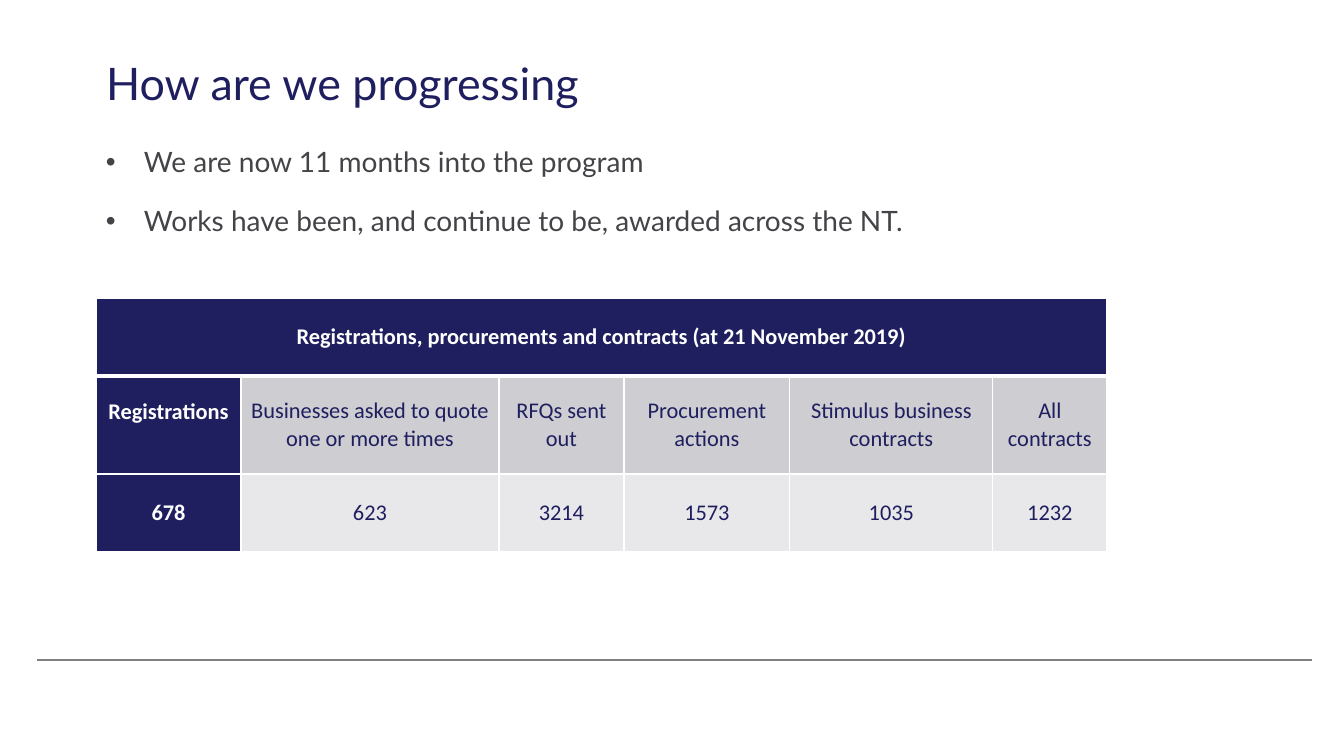
from lxml import etree
from pptx import Presentation
from pptx.dml.color import RGBColor
from pptx.enum.shapes import MSO_CONNECTOR
from pptx.enum.text import MSO_ANCHOR, PP_ALIGN
from pptx.oxml.ns import qn
from pptx.util import Emu, Pt

SCALE = 914400 / 100.8
STRAIGHT = MSO_CONNECTOR.STRAIGHT
TOP, MIDDLE = MSO_ANCHOR.TOP, MSO_ANCHOR.MIDDLE
CENTER, LEFT = PP_ALIGN.CENTER, PP_ALIGN.LEFT

NAVY, WHITE, GREY_TEXT, RULE_GREY = "1F1F5F", "FFFFFF", "454347", "808080"
HEADING_FILL, VALUE_FILL = "CDCDD2", "E8E8EA"

POINTS = ["We are now 11 months into the program",
          "Works have been, and continue to be, awarded across the NT."]
TABLE_TITLE = "Registrations, procurements and contracts (at 21 November 2019)"
# Heading, value and column width in px
MEASURES = [("Registrations", "678", 145),
            ("Businesses asked to quote one or more times", "623", 258),
            ("RFQs sent out", "3214", 125),
            ("Procurement actions", "1573", 166),
            ("Stimulus business contracts", "1035", 203),
            ("All contracts", "1232", 114)]
ROW_HEIGHTS = [78, 98, 78]


def px(length):
    return Emu(round(length * SCALE))


def color(value):
    return RGBColor.from_string(value)


def apply(target, values):
    for name, value in values.items():
        setattr(target, name, value)


def style_font(font, name, size, tone, bold=False):
    apply(font, {"name": name, "size": Pt(size), "bold": bold})
    font.color.rgb = color(tone)


def add_title(page, text):
    title = page.shapes.title
    apply(title, {"left": px(96), "top": px(39), "width": px(1158), "height": px(80)})
    frame = title.text_frame
    frame.text = text
    frame.vertical_anchor = MIDDLE
    para = frame.paragraphs[0]
    apply(para, {"alignment": LEFT, "line_spacing": Pt(43.9)})
    style_font(para.font, "Lato", 32, NAVY)


def add_bullets(page, points):
    frame = page.shapes.add_textbox(px(96), px(145), px(1158), px(127)).text_frame
    apply(frame, {"word_wrap": True, "margin_top": 0, "margin_bottom": px(5)})
    for index, point in enumerate(points):
        para = frame.add_paragraph() if index else frame.paragraphs[0]
        para.text = point
        props = para._p.get_or_add_pPr()
        props.set("marL", str(px(38)))
        props.set("indent", str(-px(38)))
        etree.SubElement(props, qn("a:buFont"), typeface="Arial")
        etree.SubElement(props, qn("a:buChar"), char="•")
        apply(para, {"space_before": Pt(6 if index else 0), "space_after": Pt(12)})
        style_font(para.font, "Lato", 20, GREY_TEXT)


def set_borders(cell, top, bottom):
    props = cell._tc.get_or_add_tcPr()
    for side, points in (("L", 1), ("R", 1), ("T", top), ("B", bottom)):
        line = etree.SubElement(props, qn(f"a:ln{side}"), w=str(Pt(points)))
        fill = etree.SubElement(line, qn("a:solidFill"))
        etree.SubElement(fill, qn("a:srgbClr"), val=WHITE)


def fill_cell(cell, text, background, strong):
    apply(cell, {"text": text, "vertical_anchor": MIDDLE,
                 "margin_left": px(8), "margin_right": px(8),
                 "margin_top": px(16), "margin_bottom": px(16)})
    cell.fill.solid()
    cell.fill.fore_color.rgb = color(background)
    para = cell.text_frame.paragraphs[0]
    para.alignment = CENTER
    style_font(para.font, "Calibri", 16, WHITE if strong else NAVY, strong)


def add_measures(page):
    headings, values, widths = zip(*MEASURES)
    table = page.shapes.add_table(len(ROW_HEIGHTS), len(MEASURES), px(96), px(298),
                                  px(sum(widths)), px(sum(ROW_HEIGHTS))).table
    apply(table, {"first_row": False, "horz_banding": False})
    for column, width in zip(table.columns, widths):
        column.width = px(width)
    for row, height in zip(table.rows, ROW_HEIGHTS):
        row.height = px(height)
    # The title row is parted from the rest by a thicker line
    for row, (top, bottom) in zip(table.rows, [(1, 3), (3, 1), (1, 1)]):
        for cell in row.cells:
            set_borders(cell, top, bottom)
    table.cell(0, 0).merge(table.cell(0, len(MEASURES) - 1))
    fill_cell(table.cell(0, 0), TABLE_TITLE, NAVY, True)
    for row, texts, shade in ((1, headings, HEADING_FILL), (2, values, VALUE_FILL)):
        for column, text in enumerate(texts):
            strong = column == 0
            fill_cell(table.cell(row, column), text, NAVY if strong else shade, strong)
    # The one-line heading sits level with the first line of its neighbours
    apply(table.cell(1, 0), {"vertical_anchor": TOP, "margin_top": px(22)})


def add_rule(page):
    rule = page.shapes.add_connector(STRAIGHT, px(37), px(660), px(1312), px(660))
    rule.line.color.rgb = color(RULE_GREY)
    rule.line.width = Pt(1)
    etree.SubElement(rule._element.spPr, qn("a:effectLst"))


def main():
    deck = Presentation()
    apply(deck, {"slide_width": px(1344), "slide_height": px(756)})
    page = deck.slides.add_slide(deck.slide_layouts[5])
    add_rule(page)
    add_title(page, "How are we progressing")
    add_bullets(page, POINTS)
    add_measures(page)
    deck.save("out.pptx")


if __name__ == "__main__":
    main()
